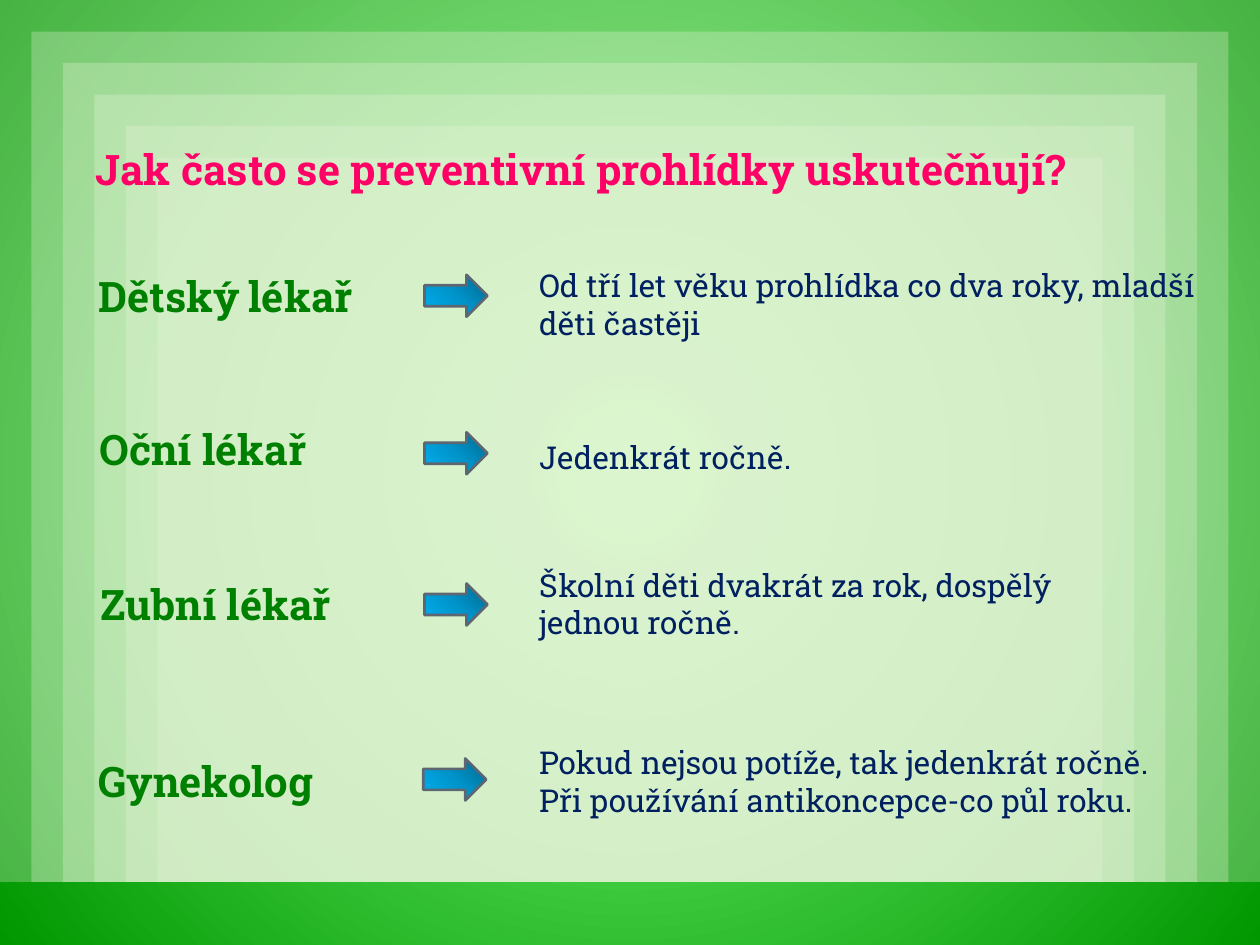
from dataclasses import dataclass

from lxml import etree
from pptx import Presentation
from pptx.dml.color import RGBColor
from pptx.enum.shapes import MSO_SHAPE
from pptx.enum.text import MSO_ANCHOR, MSO_AUTO_SIZE, PP_ALIGN
from pptx.oxml.ns import qn
from pptx.util import Pt

RECT = MSO_SHAPE.RECTANGLE
ARROW = MSO_SHAPE.RIGHT_ARROW
TOP = MSO_ANCHOR.TOP
LEFT = PP_ALIGN.LEFT
GROW = MSO_AUTO_SIZE.SHAPE_TO_FIT_TEXT


@dataclass(frozen=True)
class Theme:
    font: str = "Roboto Slab"
    large: int = 24
    small: int = 18
    title: str = "FF0066"
    label: str = "008000"
    body: str = "002060"
    frame: str = "E9F5DB"
    alpha: int = 30
    edge: str = "5E6671"
    back: tuple = ((0, "7FFF7F"), (100, "009700"))
    arrow: tuple = ((0, "00688E"), (50, "0094CA"), (100, "00B0F0"))


@dataclass(frozen=True)
class Box:
    left: float
    top: float
    width: float
    height: float

    def place(self) -> tuple:
        return Pt(self.left), Pt(self.top), Pt(self.width), Pt(self.height)


@dataclass(frozen=True)
class Row:
    label: str
    label_box: Box
    arrow_box: Box
    lines: tuple
    text_box: Box


THEME = Theme()
WIDTH, HEIGHT, FLOOR = 720, 540, 504
STEP, FRAMES = 18, 6
TITLE = "Jak často se preventivní prohlídky uskutečňují?"
TITLE_BOX = Box(47.5, 78.5, 627, 36)
ROWS = (
    Row("Dětský lékař", Box(49, 151, 173.5, 36), Box(242.6, 157, 36, 24),
        ("Od tří let věku prohlídka co dva roky, mladší děti častěji",),
        Box(301, 148.3, 404.6, 51)),
    Row("Oční lékař", Box(49.7, 238.3, 144.7, 36), Box(242.6, 247, 36, 24),
        ("Jedenkrát ročně.",), Box(301, 247, 170.6, 29)),
    Row("Zubní lékař", Box(50.4, 327, 162, 36), Box(242.6, 333.4, 36, 24),
        ("Školní děti dvakrát za rok, dospělý jednou ročně.",),
        Box(301, 319.7, 324, 51)),
    Row("Gynekolog", Box(49, 428.4, 147.6, 36), Box(241.9, 433.4, 36, 24),
        ("Pokud nejsou potíže, tak jedenkrát ročně.",
         "Při používání antikoncepce-co půl roku."),
        Box(301, 421.2, 384.5, 51)),
)


def paint(host, stops: tuple, focus: dict) -> None:
    grad = host.find(".//" + qn("a:gradFill"))
    for part in list(grad):
        grad.remove(part)
    group = etree.SubElement(grad, qn("a:gsLst"))
    for pos, color in stops:
        stop = etree.SubElement(group, qn("a:gs"), pos=str(pos * 1000))
        etree.SubElement(stop, qn("a:srgbClr"), val=color)
    path = etree.SubElement(grad, qn("a:path"), path="circle")
    sides = {side: str(value * 1000) for side, value in focus.items()}
    etree.SubElement(path, qn("a:fillToRect"), **sides)


def draw_frame(slide, inset: float) -> None:
    box = Box(inset, inset, WIDTH - 2 * inset, FLOOR - inset)
    frame = slide.shapes.add_shape(RECT, *box.place())
    frame.shadow.inherit = False
    frame.line.fill.background()
    frame.fill.solid()
    frame.fill.fore_color.rgb = RGBColor.from_string(THEME.frame)
    color = frame._element.spPr.find(".//" + qn("a:srgbClr"))
    etree.SubElement(color, qn("a:alpha"), val=str(THEME.alpha * 1000))


def draw_arrow(slide, box: Box) -> None:
    arrow = slide.shapes.add_shape(ARROW, *box.place())
    arrow.shadow.inherit = False
    arrow.line.color.rgb = RGBColor.from_string(THEME.edge)
    arrow.line.width = Pt(1.5)
    arrow.fill.gradient()
    paint(arrow._element.spPr, THEME.arrow, {"l": 100, "b": 100})


def write(shape, box: Box, lines: tuple, size: int, color: str, bold: bool) -> None:
    shape.left, shape.top, shape.width, shape.height = box.place()
    frame = shape.text_frame
    frame.text = "\n".join(lines)
    frame.word_wrap = True
    frame.auto_size = GROW
    frame.vertical_anchor = TOP
    for para in frame.paragraphs:
        para.alignment = LEFT
        para.font.name = THEME.font
        para.font.size = Pt(size)
        para.font.bold = bold
        para.font.color.rgb = RGBColor.from_string(color)


def draw_row(slide, row: Row) -> None:
    label = slide.shapes.add_textbox(*row.label_box.place())
    write(label, row.label_box, (row.label,), THEME.large, THEME.label, True)
    draw_arrow(slide, row.arrow_box)
    text = slide.shapes.add_textbox(*row.text_box.place())
    write(text, row.text_box, row.lines, THEME.small, THEME.body, False)


def main() -> None:
    deck = Presentation()
    deck.slide_width, deck.slide_height = Pt(WIDTH), Pt(HEIGHT)
    slide = deck.slides.add_slide(deck.slide_layouts[5])
    slide.background.fill.gradient()
    paint(slide._element, THEME.back, dict.fromkeys("ltrb", 50))
    for index in range(FRAMES):
        draw_frame(slide, index * STEP)
    title = slide.shapes.title
    write(title, TITLE_BOX, (TITLE,), THEME.large, THEME.title, True)
    slide.shapes._spTree.append(title._element)
    for row in ROWS:
        draw_row(slide, row)
    deck.save("out.pptx")


if __name__ == "__main__":
    main()
